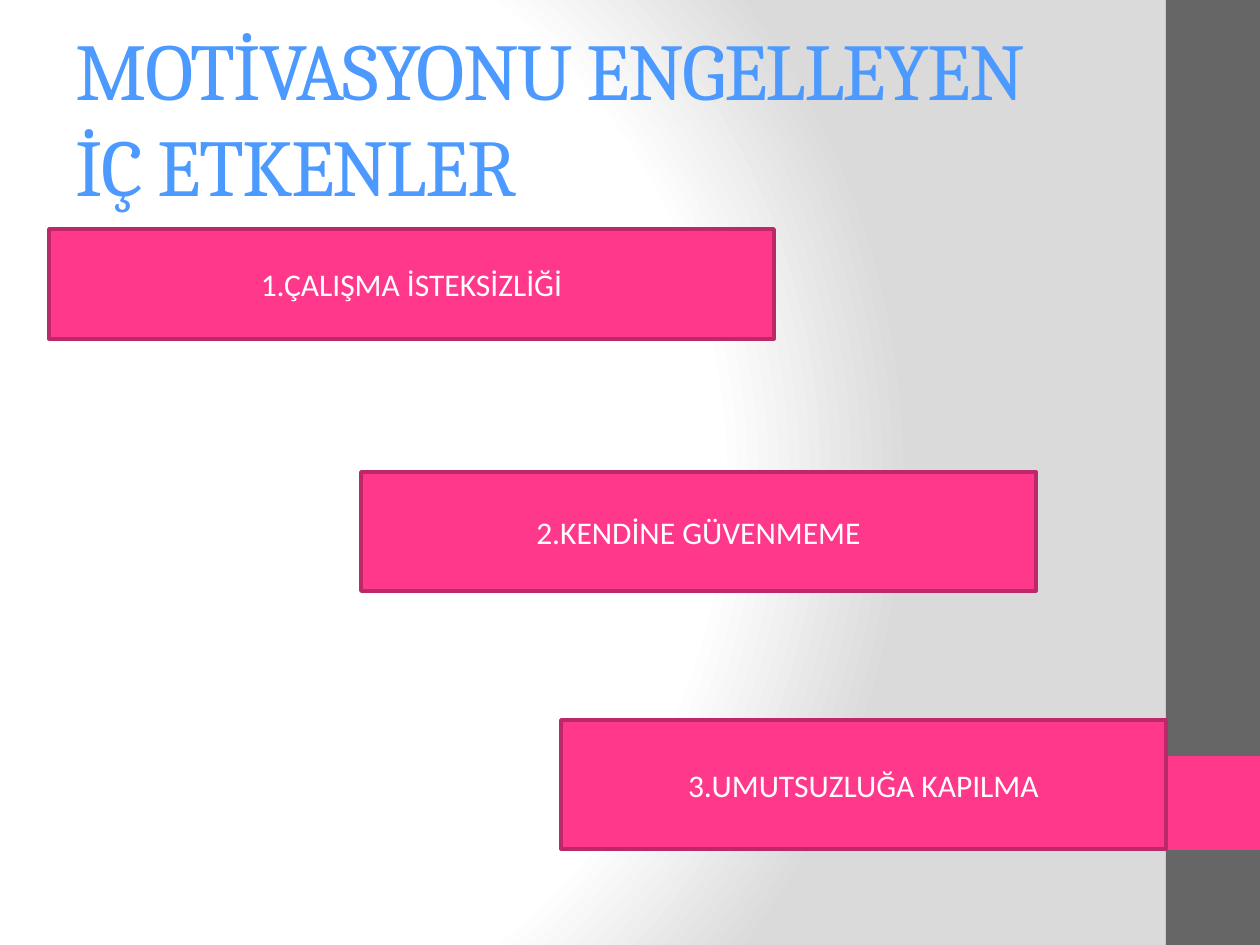
from dataclasses import dataclass

from lxml import etree
from pptx import Presentation
from pptx.dml.color import RGBColor
from pptx.enum import shapes, text
from pptx.oxml import ns
from pptx.util import Pt


@dataclass(frozen=True)
class Theme:
    title: str = "4C99FF"
    accent: str = "FF388C"
    outline: str = "BD2968"
    sidebar: str = "666666"
    light: str = "FFFFFF"
    shade: str = "DADADA"
    title_font: str = "Cambria"
    body_font: str = "Calibri"
    title_size: int = 46
    body_size: int = 18
    outline_width: int = 2


theme = Theme()
EMU_PER_PX = 914400 / 126


def px(*lengths):
    return [round(length * EMU_PER_PX) for length in lengths]


def add_rectangle(box, color):
    shape = slide.shapes.add_shape(shapes.MSO_SHAPE.RECTANGLE, *px(*box))
    shape.shadow.inherit = False
    shape.fill.solid()
    shape.fill.fore_color.rgb = RGBColor.from_string(color)
    shape.line.fill.background()
    return shape


presentation = Presentation()
presentation.slide_width, presentation.slide_height = px(1260, 945)
slide = presentation.slides.add_slide(presentation.slide_layouts[5])

slide.background.fill.gradient()
gradient = slide.element.find(".//" + ns.qn("a:gradFill"))
for child in list(gradient):
    gradient.remove(child)
stops = etree.SubElement(gradient, ns.qn("a:gsLst"))
for position, color in ((0, theme.light), (75, theme.light), (100, theme.shade)):
    stop = etree.SubElement(stops, ns.qn("a:gs"), pos=str(position * 1000))
    etree.SubElement(stop, ns.qn("a:srgbClr"), val=color)
circle = etree.SubElement(gradient, ns.qn("a:path"), attrib={"path": "circle"})
etree.SubElement(circle, ns.qn("a:fillToRect"), l="20000", t="50000", r="100000", b="50000")

add_rectangle((1166, 0, 94, 945), theme.sidebar)
add_rectangle((1166, 756, 94, 94), theme.accent)

title = slide.shapes.title
title.left, title.top, title.width, title.height = px(63, 38, 1050, 157)
frame = title.text_frame
frame.word_wrap = True
frame.auto_size = text.MSO_AUTO_SIZE.NONE
frame.vertical_anchor = text.MSO_ANCHOR.MIDDLE
frame.text = "MOTİVASYONU ENGELLEYEN\vİÇ ETKENLER"
paragraph = frame.paragraphs[0]
paragraph.alignment = text.PP_ALIGN.LEFT
title_format = {"name": theme.title_font, "size": Pt(theme.title_size)}
for run in paragraph.runs:
    for name, value in title_format.items():
        setattr(run.font, name, value)
    run.font.color.rgb = RGBColor.from_string(theme.title)
    run.font._element.set("spc", "-100")

factors = [
    ("1.ÇALIŞMA İSTEKSİZLİĞİ", (49, 229, 725, 110)),
    ("2.KENDİNE GÜVENMEME", (361, 472, 675, 119)),
    ("3.UMUTSUZLUĞA KAPILMA", (561, 720, 605, 129)),
]
body_format = {"name": theme.body_font, "size": Pt(theme.body_size)}
for label, box in factors:
    shape = add_rectangle(box, theme.accent)
    shape.line.color.rgb = RGBColor.from_string(theme.outline)
    shape.line.width = Pt(theme.outline_width)
    frame = shape.text_frame
    frame.word_wrap = True
    frame.vertical_anchor = text.MSO_ANCHOR.MIDDLE
    frame.text = label
    paragraph = frame.paragraphs[0]
    paragraph.alignment = text.PP_ALIGN.CENTER
    font = paragraph.runs[0].font
    for name, value in body_format.items():
        setattr(font, name, value)
    font.color.rgb = RGBColor.from_string(theme.light)

presentation.save("out.pptx")
